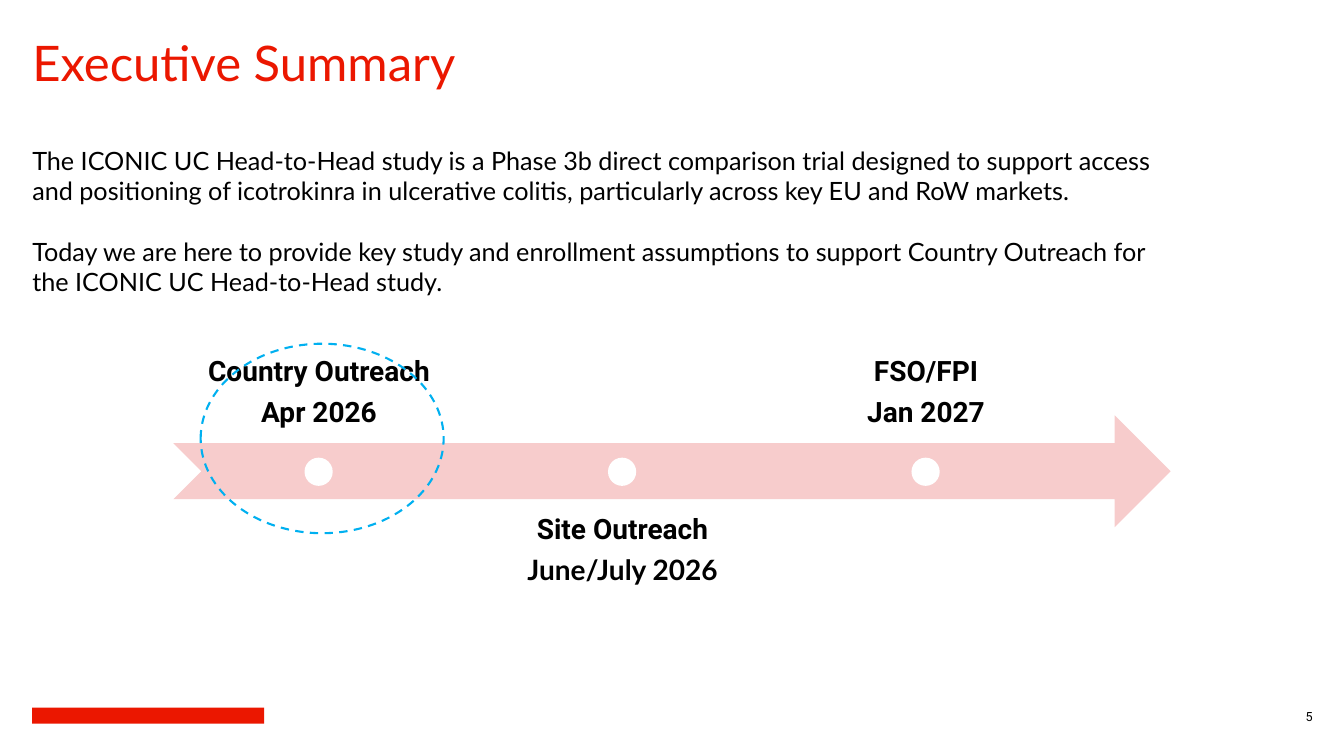
from pptx import Presentation
from pptx.dml.color import RGBColor
from pptx.enum import dml, shapes, text
from pptx.util import Inches, Pt

RED = RGBColor(0xEB, 0x17, 0x00)
PINK = RGBColor(0xF7, 0xCC, 0xCC)
BLUE = RGBColor(0x00, 0xB0, 0xF0)
BLACK = RGBColor(0, 0, 0)
WHITE = RGBColor(0xFF, 0xFF, 0xFF)

INTRO = [
    "The ICONIC UC Head‑to‑Head study is a Phase 3b direct comparison trial "
    "designed to support access and positioning of icotrokinra in ulcerative "
    "colitis, particularly across key EU and RoW markets.",
    "Today we are here to provide key study and enrollment assumptions to "
    "support Country Outreach for the ICONIC UC Head‑to‑Head study.",
]
MILESTONES = [
    ("Country Outreach", "Apr 2026", "Roboto", True),
    ("Site Outreach", "June/July 2026", "Lato", False),
    ("FSO/FPI", "Jan 2027", "Roboto", True),
]
TOP, MIDDLE, BOTTOM = (
    text.MSO_ANCHOR.TOP, text.MSO_ANCHOR.MIDDLE, text.MSO_ANCHOR.BOTTOM)
LEFT, CENTER, RIGHT = text.PP_ALIGN.LEFT, text.PP_ALIGN.CENTER, text.PP_ALIGN.RIGHT


def add_text(s, box, lines, size, fonts, color=BLACK, bold=False, align=LEFT,
             anchor=TOP, inset=0, spacing=1.0, before=0, after=0):
    tf = s.shapes.add_textbox(*map(Inches, box)).text_frame
    tf.word_wrap = True
    tf.vertical_anchor = anchor
    tf.margin_left = tf.margin_right = Inches(inset)
    tf.margin_top = tf.margin_bottom = Inches(inset)
    for i, (line, font) in enumerate(zip(lines, fonts)):
        p = tf.add_paragraph() if i else tf.paragraphs[0]
        p.text = line
        p.alignment = align
        p.line_spacing = spacing
        p.space_before = Pt(before if i else 0)
        p.space_after = Pt(after)
        r = p.runs[0]
        r.font.name = font
        r.font.size = Pt(size)
        r.font.bold = bold
        r.font.color.rgb = color


def add_solid(s, kind, box, color):
    sp = s.shapes.add_shape(kind, *map(Inches, box))
    sp.shadow.inherit = False
    sp.fill.solid()
    sp.fill.fore_color.rgb = color
    sp.line.fill.background()


def add_highlight(s, box):
    sp = s.shapes.add_shape(shapes.MSO_SHAPE.OVAL, *map(Inches, box))
    sp.shadow.inherit = False
    sp.fill.background()
    sp.line.color.rgb = BLUE
    sp.line.width = Pt(1.5)
    sp.line.dash_style = dml.MSO_LINE.DASH


def add_milestone(s, index, name, date, date_font, above):
    left = 1.73 + 3.01 * index
    add_text(s, (left, 3.3 if above else 4.95, 2.87, 1.11), [name, date], 20,
             ["Roboto", date_font], bold=True, align=CENTER,
             anchor=BOTTOM if above else TOP, inset=0.16, spacing=0.9, after=7.5)
    add_solid(s, shapes.MSO_SHAPE.OVAL, (left + 1.29, 4.54, 0.28, 0.28), WHITE)


def main():
    prs = Presentation()
    prs.slide_width = Inches(13.33)
    prs.slide_height = Inches(7.5)
    s = prs.slides.add_slide(prs.slide_layouts[6])

    add_solid(s, shapes.MSO_SHAPE.RECTANGLE, (0.32, 7.02, 2.3, 0.16), RED)
    add_text(s, (12.1, 7.02, 0.92, 0.17), ["5"], 9, ["Roboto"],
             align=RIGHT, anchor=MIDDLE, spacing=1.1)
    add_text(s, (0.32, 0.4, 10.55, 0.51), ["Executive Summary"], 35, ["Lato"],
             color=RED, anchor=BOTTOM, spacing=0.85)
    add_text(s, (0.32, 1.44, 11.29, 1.51), INTRO, 18, ["Lato"] * 2, before=21.6)

    add_solid(s, shapes.MSO_SHAPE.NOTCHED_RIGHT_ARROW, (1.72, 4.12, 9.89, 1.11), PINK)
    for i, milestone in enumerate(MILESTONES):
        add_milestone(s, i, *milestone)
    add_highlight(s, (1.99, 3.41, 2.41, 1.88))

    prs.save("out.pptx")


if __name__ == "__main__":
    main()
